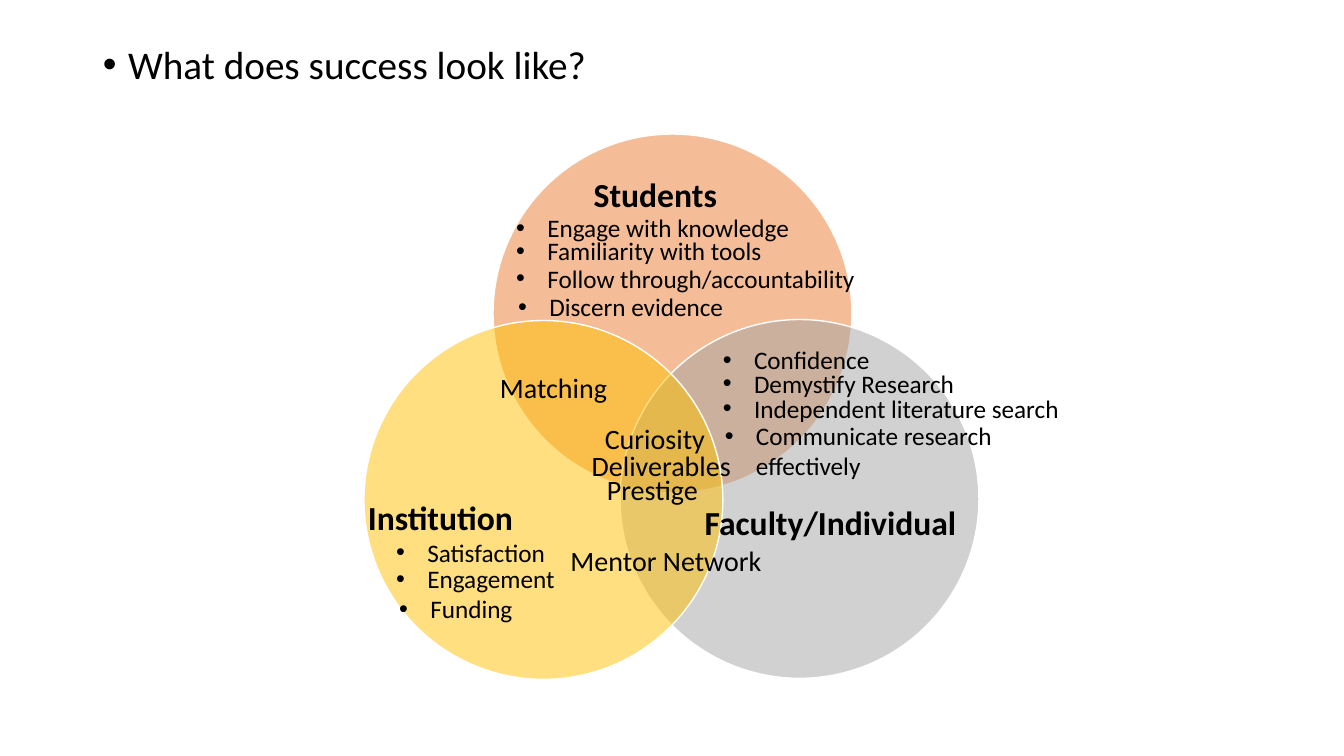
from lxml.etree import SubElement
from pptx import Presentation
from pptx.dml.color import RGBColor
from pptx.enum.shapes import MSO_SHAPE as Shape
from pptx.enum.text import MSO_ANCHOR as Anchor, MSO_AUTO_SIZE as AutoSize, PP_ALIGN as Align
from pptx.oxml.ns import qn
from pptx.util import Inches, Pt

BLACK = RGBColor(0x00, 0x00, 0x00)
WHITE = RGBColor(0xFF, 0xFF, 0xFF)
ORANGE = RGBColor(0xED, 0x7D, 0x31)
GRAY = RGBColor(0xA5, 0xA5, 0xA5)
GOLD = RGBColor(0xFF, 0xC0, 0x00)

TITLE = "What does success look like?"
DIAMETER = 3.56
CIRCLES = [
    (4.89, 1.33, ORANGE),
    (6.15, 3.17, GRAY),
    (3.61, 3.18, GOLD),
]
HEADINGS = [
    ("Students", 5.79, 1.68, 1.44),
    ("Faculty/Individual", 6.89, 4.93, 2.72),
    ("Institution", 3.55, 4.88, 1.66),
]
SHARED = [
    ("Matching", 4.86, 3.63, 1.28),
    ("Curiosity", 5.9, 4.13, 1.2),
    ("Deliverables", 5.77, 4.4, 1.6),
    ("Prestige", 5.92, 4.64, 1.12),
    ("Mentor Network", 5.56, 5.34, 2.11),
]
OUTCOMES = [
    ("Engage with knowledge", 5.02, 2.06, 3.28),
    ("Familiarity with tools", 5.02, 2.29, 2.66),
    ("Follow through/accountability", 5.02, 2.56, 3.6),
    ("Discern evidence", 5.04, 2.84, 2.26),
    ("Confidence", 7.07, 3.37, 1.68),
    ("Demystify Research", 7.07, 3.6, 2.52),
    ("Independent literature search", 7.07, 3.85, 3.58),
    ("Communicate research effectively", 7.09, 4.12, 3.87),
    ("Satisfaction", 3.83, 5.28, 1.7),
    ("Engagement", 3.83, 5.54, 1.8),
    ("Funding", 3.86, 5.84, 1.34),
]
WRAPPED = {"Engage with knowledge", "Communicate research effectively"}
TWO_LINES = {"Communicate research effectively": 0.71}
LABEL_STYLES = [
    (SHARED, 0.44, {"size": Pt(20)}, None),
    (OUTCOMES, 0.4, {"size": Pt(18)}, 0.31),
    (HEADINGS, 0.5, {"size": Pt(24), "bold": True}, None),
]


def apply(target, values):
    for name, value in values.items():
        setattr(target, name, value)


def write(shape, text, font, indent=None):
    paragraph = shape.text_frame.paragraphs[0]
    paragraph.alignment = Align.LEFT
    run = paragraph.add_run()
    run.text = text
    apply(run.font, {"name": "Calibri", **font})
    run.font.color.rgb = BLACK
    if indent:
        properties = paragraph._p.get_or_add_pPr()
        properties.set("marL", str(Inches(indent)))
        properties.set("indent", str(-Inches(indent)))
        SubElement(properties, qn("a:buFont"), typeface="Arial")
        SubElement(properties, qn("a:buChar"), char="•")
    return paragraph


def add_circle(slide, left, top, color):
    circle = slide.shapes.add_shape(
        Shape.OVAL, Inches(left), Inches(top), Inches(DIAMETER), Inches(DIAMETER))
    circle.shadow.inherit = False
    circle.fill.solid()
    circle.fill.fore_color.rgb = color
    solid_color = circle._element.spPr.find(qn("a:solidFill"))[0]
    SubElement(solid_color, qn("a:alpha"), val="50000")
    circle.line.color.rgb = WHITE
    circle.line.width = Pt(1)


def add_label(slide, text, left, top, width, height, font, indent):
    label = slide.shapes.add_textbox(
        Inches(left), Inches(top), Inches(width), Inches(height))
    apply(label.text_frame, {
        "word_wrap": text in WRAPPED, "auto_size": AutoSize.SHAPE_TO_FIT_TEXT})
    write(label, text, font, indent)


def main():
    presentation = Presentation()
    apply(presentation, {"slide_width": Inches(13.33), "slide_height": Inches(7.5)})
    slide = presentation.slides.add_slide(presentation.slide_layouts[5])

    title = slide.shapes.title
    apply(title, {"left": Inches(0.92), "top": Inches(0.4),
                  "width": Inches(11.5), "height": Inches(0.6)})
    apply(title.text_frame, {"vertical_anchor": Anchor.TOP, "word_wrap": True,
                             "auto_size": AutoSize.NONE})
    write(title, TITLE, {"size": Pt(28)}, 0.25).line_spacing = 0.9

    for circle in CIRCLES:
        add_circle(slide, *circle)
    for labels, height, font, indent in LABEL_STYLES:
        for text, left, top, width in labels:
            add_label(slide, text, left, top, width,
                      TWO_LINES.get(text, height), font, indent)

    presentation.save("out.pptx")


if __name__ == "__main__":
    main()
